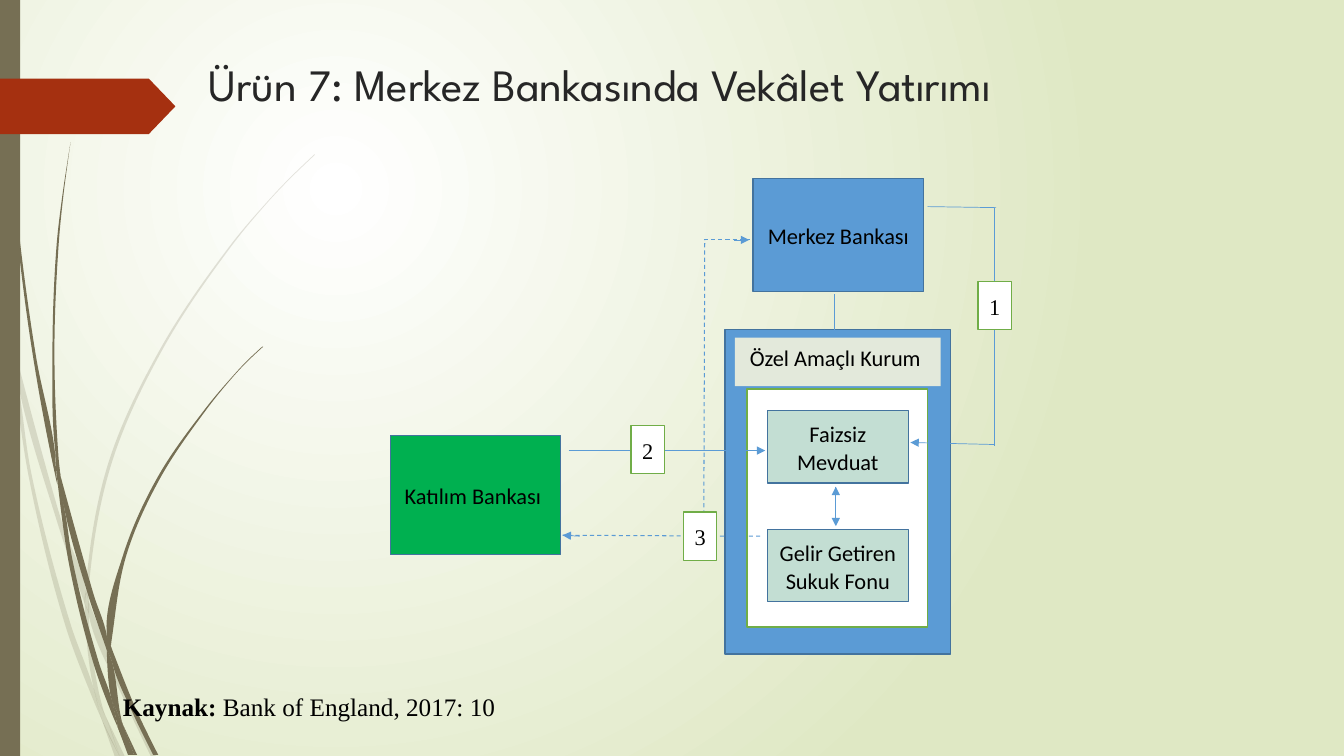
import dataclasses
import math

import pptx
import pptx.dml.color
import pptx.enum.dml
import pptx.enum.shapes
import pptx.enum.text
import pptx.oxml
import pptx.oxml.ns
import pptx.util
from pptx.util import Inches

Shapes = pptx.enum.shapes.MSO_SHAPE
Align = pptx.enum.text.PP_ALIGN
Anchor = pptx.enum.text.MSO_ANCHOR


@dataclasses.dataclass(frozen=True)
class Theme:
    white: str = "FFFFFF"
    black: str = "000000"
    backdrop: str = "DFE8C4"
    wisp: str = "766F54"
    flag: str = "A53010"
    title: str = "262626"
    blue: str = "5B9BD5"
    blue_edge: str = "43739E"
    green: str = "00B050"
    green_edge: str = "70AD47"
    mint: str = "C3DED3"
    label: str = "E3E9DB"
    title_font: str = "League Spartan"
    box_font: str = "Calibri"
    serif_font: str = "Times New Roman"
    title_size: int = 32
    box_size: int = 16
    source_size: int = 18


THEME = Theme()

FADED_WISPS = [
    [(0.11, 3.5), (0.09, 3.22), (0, 2.82), (0, 2.99), (0.1, 3.44)],
    [(0.58, 5.22), (0.84, 5.99), (0.85, 5.86), (0.62, 5.2), (0.14, 3.45), (0.17, 3.76)],
    [(0.92, 6.07), (0.88, 5.96), (0.88, 6.1), (1.23, 6.94), (1.5, 7.51), (1.55, 7.51), (1.27, 6.92)],
    [(1.19, 7.51), (1.24, 7.51), (1.05, 7.11)],
    [(0.93, 6.83), (0.7, 6.19), (0.31, 4.69), (0.17, 3.76), (0.11, 3.5), (0.28, 4.7), (0.65, 6.21),
     (0.92, 6.93), (1.01, 7.14), (0.99, 7.07)],
    [(0.84, 5.99), (0.87, 6.46), (0.93, 6.83), (0.96, 6.92), (1.05, 7.11), (1.03, 7.06), (0.91, 6.46),
     (0.88, 6.1), (0.88, 6.08)],
    [(0.88, 5.84), (1.1, 4.62), (1.6, 3.49), (2.29, 2.45), (2.68, 1.98), (2.9, 1.75), (3.12, 1.54), (3.12, 1.53),
     (2.89, 1.75), (2.68, 1.97), (2.28, 2.44), (1.58, 3.48), (1.07, 4.61), (0.85, 5.84), (0.85, 5.86), (0.88, 5.96)],
    [(1.01, 7.14), (1.14, 7.51), (1.19, 7.51)],
    [(0.88, 6.08), (0.88, 6.1), (0.88, 5.96), (0.85, 5.86), (0.84, 5.99)],
    [(0.96, 6.92), (0.93, 6.83), (0.99, 7.07), (1.01, 7.14), (1.19, 7.51), (1.05, 7.11)],
]
SOLID_WISPS = [
    [(0.07, 1.1), (0.17, 2.33), (0.33, 3.55), (0.56, 4.77), (0.57, 4.81), (0.55, 4.57), (0.55, 4.53),
     (0.36, 3.55), (0.19, 2.32), (0.08, 1.09), (0.05, 0.48), (0.04, 0), (0.03, 0), (0.04, 0.48)],
    [(0.88, 5.92), (1.06, 6.45), (1.06, 6.33), (1.06, 6.31), (0.93, 5.9), (0.6, 4.72), (0.64, 5.05)],
    [(1.13, 6.49), (1.1, 6.41), (1.11, 6.56), (1.32, 7.08), (1.52, 7.49), (1.57, 7.49), (1.36, 7.06)],
    [(1.1, 6.91), (0.98, 6.57), (0.72, 5.56), (0.64, 5.05), (0.57, 4.77), (0.68, 5.57), (0.93, 6.59),
     (1.11, 7.08), (1.17, 7.22), (1.16, 7.17)],
    [(0.6, 4.72), (0.58, 4.53), (0.54, 3.49), (0.58, 2.45), (0.63, 1.93), (0.7, 1.41), (0.62, 1.93),
     (0.56, 2.45), (0.52, 3.49), (0.55, 4.49)],
    [(1.33, 7.49), (1.36, 7.49), (1.22, 7.19)],
    [(0.57, 4.77), (0.64, 5.05), (0.6, 4.72), (0.55, 4.49), (0.55, 4.53)],
    [(1.11, 6.33), (1.25, 5.52), (1.58, 4.76), (2.05, 4.06), (2.31, 3.74), (2.45, 3.59), (2.61, 3.44), (2.6, 3.44),
     (2.45, 3.58), (2.31, 3.73), (2.04, 4.05), (1.56, 4.74), (1.22, 5.51), (1.06, 6.31), (1.1, 6.41)],
    [(1.17, 7.22), (1.27, 7.49), (1.31, 7.49)],
    [(1.06, 6.45), (1.1, 6.91), (1.16, 7.06), (1.22, 7.19), (1.21, 7.16), (1.11, 6.56), (1.09, 6.51)],
    [(1.06, 6.45), (1.09, 6.51), (1.11, 6.56), (1.1, 6.41), (1.06, 6.31), (1.06, 6.33)],
    [(1.16, 7.06), (1.1, 6.91), (1.16, 7.17), (1.17, 7.22), (1.3, 7.49), (1.33, 7.49), (1.22, 7.19)],
]


def rgb(color):
    return pptx.dml.color.RGBColor.from_string(color)


def add_child(parent, tag, **attributes):
    child = pptx.oxml.parse_xml(f"<{tag} {pptx.oxml.ns.nsdecls('a')}/>")
    for name, value in attributes.items():
        child.set(name, value)
    parent.append(child)
    return child


def paint(shape, fill, edge=None, opacity=100):
    shape.shadow.inherit = False
    shape.fill.solid()
    shape.fill.fore_color.rgb = rgb(fill)
    if opacity < 100:
        color = shape.fill._xPr.find(".//" + pptx.oxml.ns.qn("a:srgbClr"))
        add_child(color, "a:alpha", val=str(opacity * 1000))
    if edge:
        shape.line.color.rgb = rgb(edge)
        shape.line.width = pptx.util.Pt(1)
    else:
        shape.line.fill.background()


def write(paragraph, text, *, font=THEME.box_font, size=THEME.box_size, color=THEME.black,
          bold=False, align=Align.CENTER, spacing=1.07, after=8):
    paragraph.alignment = align
    paragraph.line_spacing = spacing
    paragraph.space_after = pptx.util.Pt(after)
    run = paragraph.add_run()
    run.text = text
    run.font.name = font
    run.font.size = pptx.util.Pt(size)
    run.font.bold = bold
    run.font.color.rgb = rgb(color)


def add_box(slide, place, fill, edge=None, text="", kind=Shapes.RECTANGLE, anchor=Anchor.MIDDLE, **text_format):
    shape = slide.shapes.add_shape(kind, *map(Inches, place))
    paint(shape, fill, edge)
    if text:
        shape.text_frame.word_wrap = True
        shape.text_frame.vertical_anchor = anchor
        write(shape.text_frame.paragraphs[0], text, **text_format)
    return shape


def add_line(slide, start, end, dashed=False, ends=()):
    connector = slide.shapes.add_connector(
        pptx.enum.shapes.MSO_CONNECTOR.STRAIGHT, *map(Inches, (*start, *end)))
    connector.line.color.rgb = rgb(THEME.blue)
    connector.line.width = pptx.util.Pt(0.75 if dashed else 0.5)
    if dashed:
        connector.line.dash_style = pptx.enum.dml.MSO_LINE.DASH
    for tag in ends:
        add_child(connector.line._get_or_add_ln(), tag, type="triangle")
    add_child(connector._element.spPr, "a:effectLst")


def tangent(before, point, after):
    arriving = math.atan2(point[1] - before[1], point[0] - before[0])
    leaving = math.atan2(after[1] - point[1], after[0] - point[0])
    turn = math.remainder(leaving - arriving, math.tau)
    if abs(turn) > math.pi / 5:
        return 0, 0
    return math.cos(arriving + turn / 2), math.sin(arriving + turn / 2)


def add_wisp(slide, outline, opacity):
    points = [tuple(map(Inches, point)) for point in outline]
    following = points[1:] + points[:1]
    builder = slide.shapes.build_freeform(*points[0])
    builder.add_line_segments(following, close=True)
    shape = builder.convert_to_shape()
    tangents = [tangent(*corner) for corner in zip(points[-1:] + points[:-1], points, following)]
    segments = shape._element.findall(".//" + pptx.oxml.ns.qn("a:lnTo"))
    for segment, start, end, leaving, arriving in zip(
            segments, points, following, tangents, tangents[1:] + tangents[:1]):
        reach = math.dist(start, end) / 3
        curve = add_child(segment.getparent(), "a:cubicBezTo")
        for (x, y), (dx, dy), pull in ((start, leaving, reach), (end, arriving, -reach), (end, arriving, 0)):
            add_child(curve, "a:pt", x=str(round(x + dx * pull - shape.left)), y=str(round(y + dy * pull - shape.top)))
        segment.getparent().replace(segment, curve)
    paint(shape, THEME.wisp, opacity=opacity)


def set_background(slide):
    fill = slide.background.fill
    fill.gradient()
    for stop, color in zip(fill.gradient_stops, (THEME.white, THEME.backdrop)):
        stop.color.rgb = rgb(color)
    gradient = slide._element.find(".//" + pptx.oxml.ns.qn("a:gradFill"))
    gradient.remove(gradient.find(pptx.oxml.ns.qn("a:lin")))
    circle = add_child(gradient, "a:path", path="circle")
    add_child(circle, "a:fillToRect", l="50000", t="50000", r="100000", b="100000")


def add_decoration(slide):
    for wisps, opacity in ((FADED_WISPS, 20), (SOLID_WISPS, 100)):
        for outline in wisps:
            add_wisp(slide, outline, opacity)
    add_box(slide, (0, 0, 0.2, 7.5), THEME.wisp)
    flag = add_box(slide, (0, 0.78, 1.74, 0.55), THEME.flag, kind=Shapes.PENTAGON)
    flag.adjustments[0] = 0.48


def set_title(slide, text):
    title = slide.shapes.title
    title.left, title.top, title.width, title.height = map(Inches, (0.97, -0.01, 11.33, 1.75))
    title.text_frame.margin_left = Inches(1.1)
    title.text_frame.margin_bottom = Inches(0.13)
    title.text_frame.vertical_anchor = Anchor.MIDDLE
    write(title.text_frame.paragraphs[0], text, font=THEME.title_font, size=THEME.title_size,
          color=THEME.title, align=Align.LEFT, spacing=1.0, after=0)


def add_diagram(slide):
    add_box(slide, (7.47, 1.77, 1.69, 1.12), THEME.blue, THEME.blue_edge, "Merkez Bankası")
    add_box(slide, (7.19, 3.27, 2.24, 3.22), THEME.blue, THEME.blue_edge)
    add_box(slide, (3.87, 4.32, 1.69, 1.18), THEME.green, THEME.blue_edge, "Katılım Bankası ")
    add_box(slide, (7.41, 3.86, 1.79, 2.36), THEME.white, THEME.green_edge)
    for top, text in ((4.07, "Faizsiz Mevduat"), (5.25, "Gelir Getiren Sukuk Fonu")):
        add_box(slide, (7.61, top, 1.4, 0.72), THEME.mint, THEME.blue_edge, text)
    for start, end in (((7.54, 5.32), (5.58, 5.31)), ((6.98, 5.32), (6.99, 2.38)), ((6.98, 2.38), (7.44, 2.38))):
        add_line(slide, start, end, dashed=True)
    for start, end in (((8.28, 2.92), (8.28, 3.45)), ((9.2, 2.05), (9.88, 2.06)), ((9.86, 2.06), (9.86, 4.42))):
        add_line(slide, start, end)
    for start, end in (((5.64, 4.47), (7.59, 4.47)), ((9.86, 4.41), (9.03, 4.39)), ((5.75, 5.32), (5.58, 5.31)),
                       ((7.28, 2.38), (7.43, 2.38)), ((8.29, 4.83), (8.29, 5.22)), ((8.29, 4.96), (8.29, 4.83))):
        add_line(slide, start, end, ends=["a:tailEnd"])
    add_box(slide, (7.29, 3.35, 2.04, 0.48), THEME.label, text="Özel Amaçlı Kurum ", anchor=Anchor.TOP, spacing=1.05)
    for left, top, number in ((6.78, 5.08, "3"), (6.26, 4.22, "2"), (9.7, 2.79, "1")):
        add_box(slide, (left, top, 0.33, 0.48), THEME.white, THEME.green_edge, number,
                font=THEME.serif_font, spacing=1.05)


def add_source(slide):
    frame = slide.shapes.add_textbox(*map(Inches, (1.12, 6.66, 3.93, 0.56))).text_frame
    frame.word_wrap = False
    for text, bold in (("Kaynak:", True), (" Bank of England, 2017: 10", False)):
        write(frame.paragraphs[0], text, font=THEME.serif_font, size=THEME.source_size, bold=bold,
              align=Align.JUSTIFY, spacing=1.5, after=0)


def main():
    presentation = pptx.Presentation()
    presentation.slide_width, presentation.slide_height = Inches(13.33), Inches(7.5)
    slide = presentation.slides.add_slide(presentation.slide_layouts[5])
    set_background(slide)
    add_decoration(slide)
    set_title(slide, "Ürün 7: Merkez Bankasında Vekâlet Yatırımı")
    add_diagram(slide)
    add_source(slide)
    presentation.save("out.pptx")


if __name__ == "__main__":
    main()
